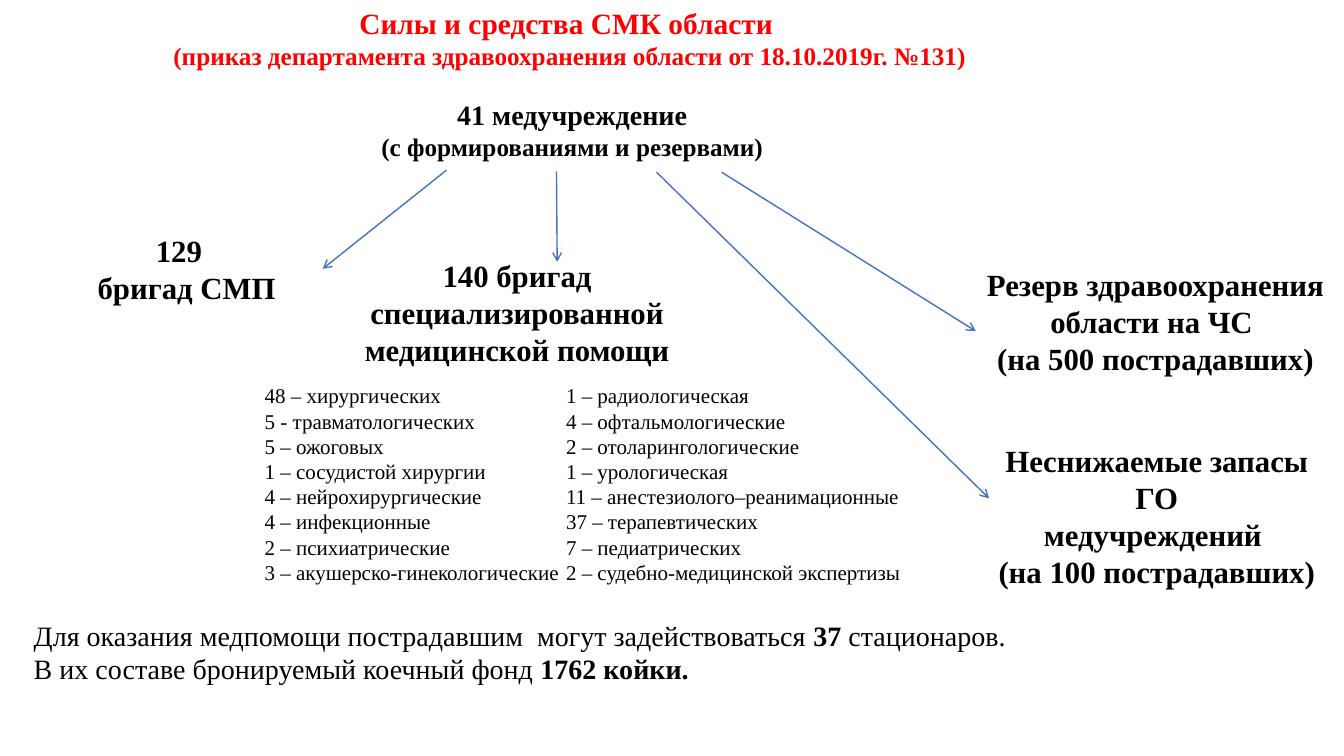
import pptx
import pptx.dml.color
import pptx.enum.shapes
import pptx.enum.text
import pptx.oxml
import pptx.oxml.ns
import pptx.util
import lxml.etree

Pt = pptx.util.Pt
ALIGN = pptx.enum.text.PP_ALIGN
FONT = "Times New Roman"
COLORS = {"title": "FF0000", "text": "000000", "arrow": "4472C4"}

SURGICAL_TEAMS = [
    "48 – хирургических",
    "5 - травматологических",
    "5 – ожоговых",
    "1 – сосудистой хирургии",
    "4 – нейрохирургические",
    "4 – инфекционные",
    "2 – психиатрические",
    "3 – акушерско-гинекологические",
]
OTHER_TEAMS = [
    "1 – радиологическая",
    "4 – офтальмологические",
    "2 – отоларингологические",
    "1 – урологическая",
    "11 – анестезиолого–реанимационные",
    "37 – терапевтических",
    "7 – педиатрических",
    "2 – судебно-медицинской экспертизы",
]


def color(name):
    """Return the named colour."""
    return pptx.dml.color.RGBColor.from_string(COLORS[name])


def add_text(slide, box, lines, sizes, bold=True, align=ALIGN.CENTER, ink="text"):
    """Add a wrapped text box, one paragraph per line, and return its paragraphs."""
    frame = slide.shapes.add_textbox(*map(Pt, box)).text_frame
    frame.word_wrap = True
    frame.text = "\n".join(lines)
    for paragraph, size in zip(frame.paragraphs, sizes):
        paragraph.alignment = align
        for run in paragraph.runs:
            format_run(run, size, bold, ink)
    return frame.paragraphs


def format_run(run, size, bold, ink="text"):
    """Set the font of a run."""
    run.font.name = FONT
    run.font.size = Pt(size)
    run.font.bold = bold
    run.font.color.rgb = color(ink)


def add_arrow(slide, start, end):
    """Draw a thin straight arrow from start to end."""
    arrow = slide.shapes.add_connector(
        pptx.enum.shapes.MSO_CONNECTOR.STRAIGHT, *map(Pt, start + end))
    arrow.line.color.rgb = color("arrow")
    arrow.line.width = Pt(1)
    line = arrow.line._get_or_add_ln()
    lxml.etree.SubElement(line, pptx.oxml.ns.qn("a:tailEnd"), type="arrow")
    properties = arrow._element.spPr
    lxml.etree.SubElement(properties, pptx.oxml.ns.qn("a:effectLst"))


def add_heading(slide, box):
    """Add the red title and the line about the order."""
    add_text(slide, box, [
        "Силы и средства СМК области ",
        "(приказ департамента здравоохранения области от 18.10.2019г. №131)",
    ], [21, 18], ink="title")


def add_institutions(slide, box):
    """Add the root of the scheme with its four arrows."""
    left, top, width, height = box
    add_text(slide, box, ["41 медучреждение", "(с формированиями и резервами)"], [20, 18])
    base = top + height
    arrows = [
        ((208, 2.5), (119.5, 73)),
        ((286.5, 3.5), (287, 68)),
        ((404.5, 4), (586, 117.5)),
        ((358, 4), (595.5, 237)),
    ]
    for start, end in arrows:
        add_arrow(slide, *((left + x, base + y) for x, y in (start, end)))


def add_branch(slide, box, lines):
    """Add a bold centred branch of the scheme."""
    add_text(slide, box, lines, [22] * len(lines))


def add_teams(slide, box):
    """Add the specialised teams heading over two columns of teams."""
    left, top, width, height = box
    add_branch(slide, (left + 60.5, top, 253.5, 87),
               ["140 бригад специализированной медицинской помощи"])
    columns = [(0, 227, SURGICAL_TEAMS), (215.25, 253.5, OTHER_TEAMS)]
    for offset, column_width, teams in columns:
        add_text(slide, (left + offset, top + 90, column_width, height - 90),
                 teams, [15] * len(teams), bold=False, align=ALIGN.LEFT)


def add_conclusion(slide, box):
    """Add the closing lines with their figures in bold."""
    lines = [
        [("Для оказания медпомощи пострадавшим  могут задействоваться ", False),
         ("37", True), (" стационаров.", False)],
        [("В их составе бронируемый коечный фонд ", False), ("1762 койки.", True)],
    ]
    paragraphs = add_text(slide, box, [line[0][0] for line in lines], [20, 20],
                          bold=False, align=ALIGN.JUSTIFY)
    for paragraph, line in zip(paragraphs, lines):
        for text, bold in line[1:]:
            run = paragraph.add_run()
            run.text = text
            format_run(run, 20, bold)


def main():
    """Build and save the slide."""
    presentation = pptx.Presentation()
    presentation.slide_width, presentation.slide_height = Pt(960), Pt(540)
    slide = presentation.slides.add_slide(presentation.slide_layouts[6])
    add_heading(slide, (52.5, 0, 709, 54))
    add_institutions(slide, (111, 66, 595.5, 53))
    add_branch(slide, (34, 162, 193, 60.5), ["129 ", " бригад СМП"])
    add_teams(slide, (182, 180, 469, 264))
    add_branch(slide, (690, 186, 270.5, 87),
               ["Резерв здравоохранения области на ЧС ", "(на 500 пострадавших)"])
    add_branch(slide, (706, 312, 240.5, 114),
               ["Неснижаемые запасы ГО", "медучреждений ", "(на 100 пострадавших)"])
    add_conclusion(slide, (17, 438, 943, 55.5))
    presentation.save("out.pptx")


if __name__ == "__main__":
    main()
